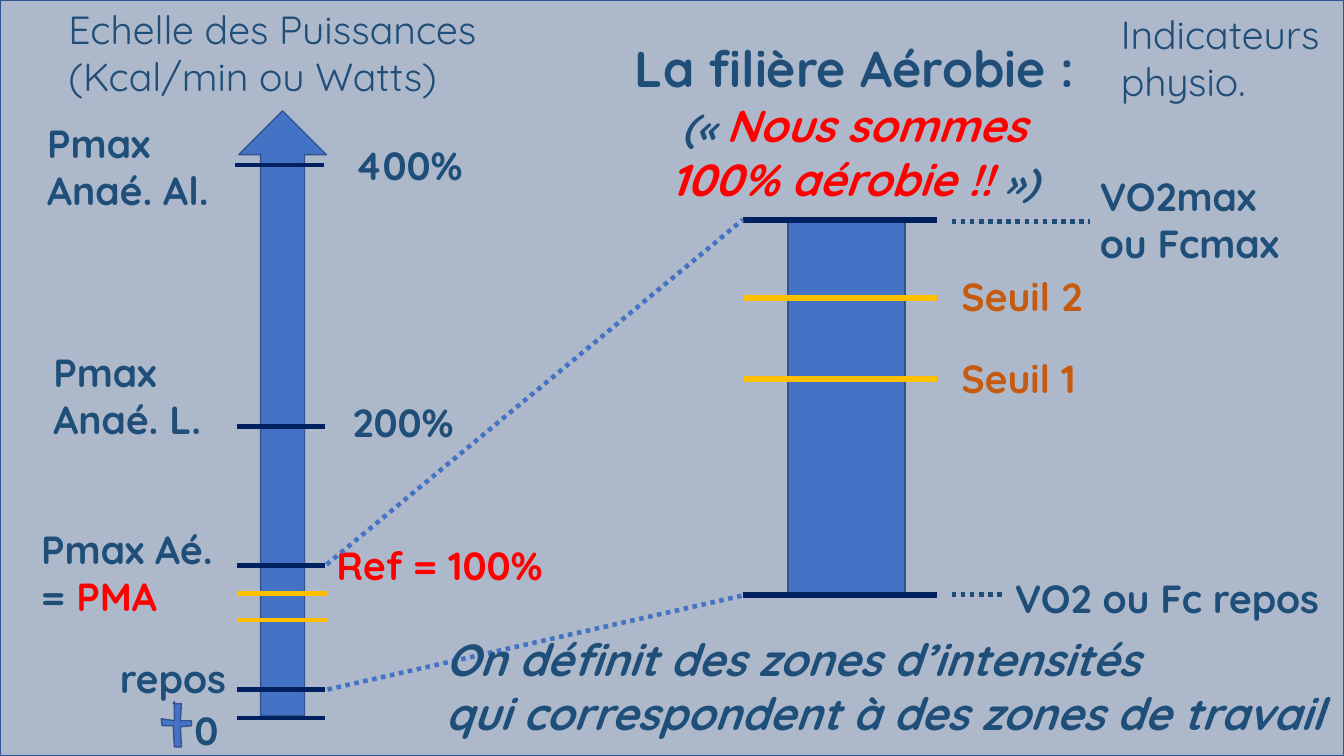
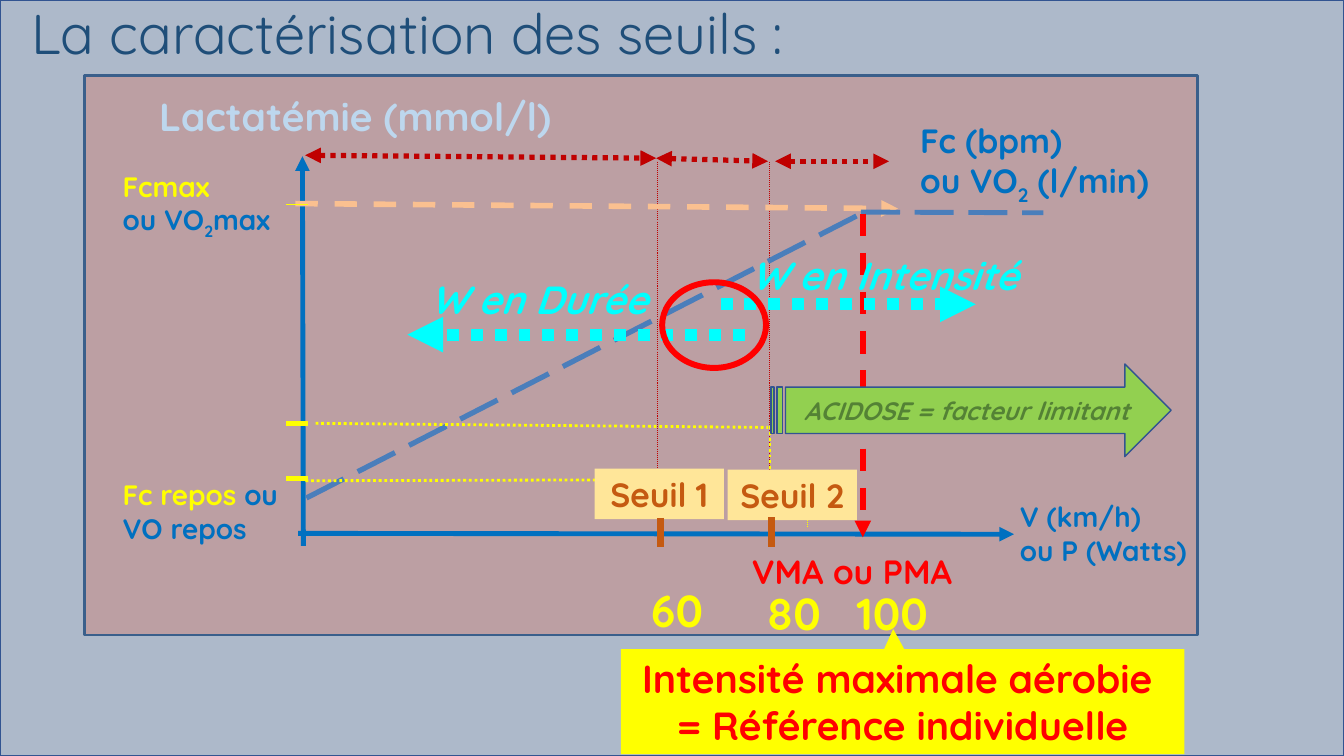
"""Build two slides on the aerobic pathway and its thresholds."""
import pptx
import pptx.dml.color
import pptx.enum.dml
import pptx.enum.shapes
import pptx.enum.text
import pptx.oxml.ns
import pptx.oxml.xmlchemy
import pptx.util

RGB = pptx.dml.color.RGBColor
Pt = pptx.util.Pt
GROUND = RGB(0xAD, 0xB9, 0xCA)
EDGE = RGB(0x32, 0x54, 0x91)
BLUE = RGB(0x44, 0x72, 0xC4)
INK = RGB(0x1F, 0x4E, 0x79)
NAVY = RGB(0x00, 0x20, 0x60)
AXIS = RGB(0x00, 0x70, 0xC0)
CURVE = RGB(0x4A, 0x7E, 0xBB)
PANEL_EDGE = RGB(0x3A, 0x5F, 0x8B)
PANEL = RGB(0xFF, 0x33, 0x00)
PALE = RGB(0xBD, 0xD7, 0xEE)
RED = RGB(0xFF, 0x00, 0x00)
DARK_RED = RGB(0xC0, 0x00, 0x00)
GOLD = RGB(0xFF, 0xC0, 0x00)
YELLOW = RGB(0xFF, 0xFF, 0x00)
PEACH = RGB(0xFA, 0xC0, 0x90)
CREAM = RGB(0xFF, 0xE6, 0x99)
RUST = RGB(0xC5, 0x5A, 0x11)
CYAN = RGB(0x00, 0xFF, 0xFF)
GREEN = RGB(0x92, 0xD0, 0x50)
DARK_GREEN = RGB(0x54, 0x82, 0x35)

SHAPE = pptx.enum.shapes.MSO_SHAPE
DASH = pptx.enum.dml.MSO_LINE
DOTS = DASH.ROUND_DOT
LEFT = pptx.enum.text.PP_ALIGN.LEFT
CENTER = pptx.enum.text.PP_ALIGN.CENTER
TOP = pptx.enum.text.MSO_ANCHOR.TOP
MIDDLE = pptx.enum.text.MSO_ANCHOR.MIDDLE


class Board:
    """Hold the shared style and the page being drawn."""

    font = "Quicksand"
    size = 28

    def __init__(self):
        """Open a wide deck with the shared ground."""
        self.deck = pptx.Presentation()
        self.deck.slide_width, self.deck.slide_height = Pt(960), Pt(540)
        ground = self.deck.slide_master.background.fill
        ground.solid()
        ground.fore_color.rgb = GROUND
        self.page = None

    def new_page(self, place, lines, **style):
        """Start a framed page with its title."""
        self.page = self.deck.slides.add_slide(self.deck.slide_layouts[5])
        title = self.page.shapes.title
        title.left, title.top, title.width, title.height = map(Pt, place)
        self.set_text(title, lines, **style)
        self.shape(SHAPE.RECTANGLE, (0, 0, 960, 540), edge=EDGE)

    def set_text(self, box, lines, size=None, color=INK, bold=True, italic=False,
                 align=LEFT, anchor=TOP, spacing=None):
        """Fill a box with lines, each a string or a list of (text, changes)."""
        frame = box.text_frame
        frame.word_wrap = True
        frame.auto_size = pptx.enum.text.MSO_AUTO_SIZE.NONE
        frame.vertical_anchor = anchor
        base = dict(size=size or self.size, color=color, bold=bold, italic=italic, baseline=0)
        for index, line in enumerate(lines):
            para = frame.add_paragraph() if index else frame.paragraphs[0]
            para.alignment = align
            if spacing:
                para.line_spacing = spacing
            for text, changes in [(line, {})] if isinstance(line, str) else line:
                look = {**base, **changes}
                span = para.add_run()
                span.text = text
                span.font.name = self.font
                span.font.size = Pt(look["size"])
                span.font.bold, span.font.italic = look["bold"], look["italic"]
                span.font.color.rgb = look["color"]
                if look["baseline"]:
                    span.font._element.set("baseline", str(look["baseline"] * 1000))

    def text(self, place, *lines, **style):
        """Add a text box."""
        self.set_text(self.page.shapes.add_textbox(*map(Pt, place)), lines, **style)

    def paint(self, shape, fill, edge, width, alpha=None):
        """Give a shape its fill and outline."""
        shape.shadow.inherit = False
        if fill is None:
            shape.fill.background()
        else:
            shape.fill.solid()
            shape.fill.fore_color.rgb = fill
        if alpha:
            color = shape._element.spPr.find(".//" + pptx.oxml.ns.qn("a:srgbClr"))
            self.child(color, "a:alpha", val=str(alpha * 1000))
        if edge is None:
            shape.line.fill.background()
        else:
            shape.line.color.rgb = edge
            shape.line.width = Pt(width)

    def child(self, parent, tag, **attributes):
        """Append an XML child with its attributes."""
        element = pptx.oxml.xmlchemy.OxmlElement(tag)
        for name, value in attributes.items():
            element.set(name, value)
        parent.append(element)

    def shape(self, kind, place, fill=None, edge=None, width=1, alpha=None, lines=(), **style):
        """Add a preset shape, with text if given."""
        shape = self.page.shapes.add_shape(kind, *map(Pt, place))
        self.paint(shape, fill, edge, width, alpha)
        if lines:
            self.set_text(shape, lines, align=CENTER, **style)

    def outline(self, points, fill, edge):
        """Add a closed polygon."""
        points = [(Pt(x), Pt(y)) for x, y in points]
        builder = self.page.shapes.build_freeform(*points[0], scale=1.0)
        builder.add_line_segments(points[1:], close=True)
        self.paint(builder.convert_to_shape(), fill, edge, 1)

    def line(self, start, end, color, width, dash=None, head=False, tail=False):
        """Add a straight line with optional dashes and arrowheads."""
        line = self.page.shapes.add_connector(
            pptx.enum.shapes.MSO_CONNECTOR.STRAIGHT, *map(Pt, (*start, *end)))
        line.line.color.rgb = color
        line.line.width = Pt(width)
        if dash:
            line.line.dash_style = dash
        stroke = line._element.spPr.find(pptx.oxml.ns.qn("a:ln"))
        for wanted, tag in ((head, "a:headEnd"), (tail, "a:tailEnd")):
            if wanted:
                self.child(stroke, tag, type="triangle")
        self.child(line._element.spPr, "a:effectLst")


def draw_pathway(board):
    """Draw the power scale beside the aerobic bar."""
    board.new_page((443.5, 23, 333.5, 128), [
        [("La filière Aérobie : ", {"size": 36})],
        [("(« ", {"italic": True}),
         ("Nous sommes 100% aérobie !! ", {"size": 32, "color": RED, "italic": True}),
         ("»)", {"italic": True})]], align=CENTER)

    board.shape(SHAPE.UP_ARROW, (170.6, 79.2, 62.6, 432), BLUE, EDGE)
    for left, y in ((169, 512.6), (169, 492.5), (168, 118), (169, 304.6), (169, 404)):
        board.line((left, y), (left + 63.4, y), NAVY, 3)
    for y in (442.8, 424):
        board.line((170, y), (233.6, y), GOLD, 3)
    board.outline([(124.6, 514.8), (124.6, 501.1), (123.8, 502.6), (129.6, 502.6),
                   (128.9, 514.8), (136.8, 514.8), (136.8, 518.4), (128.9, 519.1),
                   (129.6, 533.5), (124.6, 533.5), (123.8, 518.4), (115.9, 518.4),
                   (115.2, 513.4)], BLUE, EDGE)

    board.text((41.8, 0, 322, 75), "Echelle des Puissances (Kcal/min ou Watts)", bold=False)
    board.text((793.5, 3.6, 166.5, 75), "Indicateurs", "physio.", bold=False)
    for place, lines in (
            ((131.8, 501, 46.8, 41), ["0"]),
            ((78.5, 463.7, 106.5, 41), ["repos"]),
            ((26.6, 81.4, 172, 75), ["Pmax", "Anaé. Al."]),
            ((31, 245.5, 172, 75), ["Pmax", "Anaé. L."]),
            ((22.3, 371.5, 147, 75), ["Pmax Aé.", [("= ", {}), ("PMA", {"color": RED})]]),
            ((244.8, 280.8, 91.5, 41), ["200%"]),
            ((246.5, 97.2, 91.5, 41), ["400%"]),
            ((717.8, 406.8, 242.6, 41), ["VO2 ou Fc repos"]),
            ((778.5, 119.5, 163.5, 75), ["VO2max ou Fcmax"])):
        board.text(place, *lines)
    board.text((233.3, 383, 169, 41), "Ref = 100%", color=RED)

    board.shape(SHAPE.RECTANGLE, (563, 157, 83.5, 267), BLUE, EDGE)
    for y, color in ((157, NAVY), (424.8, NAVY), (270.7, GOLD), (213, GOLD)):
        board.line((530.6, y), (669.6, y), color, 4)
    for start, end, color in (
            ((233.3, 403.2), (530.6, 157), BLUE),
            ((234, 492.5), (530, 425.5), BLUE),
            ((679.7, 158.4), (778.3, 158.4), INK),
            ((679.7, 424.8), (717.8, 424.8), INK)):
        board.line(start, end, color, 3.25, DOTS)
    for label, top in (("Seuil 1", 249.8), ("Seuil 2", 190.8)):
        board.text((679.7, top, 104.4, 41), label, color=RUST)
    board.text((311, 447.8, 650, 85), "On définit des zones d’intensités",
               "qui correspondent à des zones de travail", size=32, italic=True)


def draw_thresholds(board):
    """Draw the threshold diagram."""
    board.new_page((15, -5, 932.4, 55.4), ["La caractérisation des seuils :"], size=40, bold=False)
    board.shape(SHAPE.RECTANGLE, (60.5, 54, 795, 399.6), PANEL, PANEL_EDGE, 2, alpha=19)

    low = {"baseline": -25}
    blue = {"color": AXIS}
    board.text((650.2, 82, 195, 67), "Fc (bpm)",
               [("ou VO", {}), ("2", low), (" (l/min)", {})], size=24, color=AXIS)
    board.text((721.4, 353.5, 150, 58), "V (km/h)", "ou P (Watts)", size=20, color=AXIS)

    board.line((216, 111.6), (216.7, 390), AXIS, 3.5, head=True)
    board.line((213, 381), (724.3, 381.6), AXIS, 3.5, tail=True)
    for x in (469.4, 550):
        board.line((x, 115.5), (x, 378), DARK_RED, 0.75, DOTS)
    board.line((211, 145.4), (641.5, 149), PEACH, 4, DASH.DASH, tail=True)
    for y, width in ((341.6, 3.75), (302.4, 3.75), (146.2, 0.75)):
        board.line((204.5, y), (220.3, y), YELLOW, width)
    board.line((576.7, 359.3), (576.7, 375.8), YELLOW, 0.75, DOTS)
    for start, end in (((218, 110.9), (468.7, 113)), ((468.7, 113), (548.6, 115.2)),
                       ((553.7, 115.2), (635, 115.2))):
        board.line(start, end, DARK_RED, 3.75, DOTS, head=True, tail=True)
    board.line((218.9, 355.7), (616.3, 152), CURVE, 3.75, DASH.LONG_DASH)
    board.line((615, 151.5), (745.2, 152), CURVE, 3.5, DASH.LONG_DASH)
    board.line((616.3, 152.6), (616.3, 383.8), RED, 4, DASH.DASH, tail=True)

    board.text((80.6, 117.4, 143.3, 58), "Fcmax",
               [("ou VO", blue), ("2", {**blue, **low}), ("max", blue)], size=20, color=YELLOW)
    board.text((80.6, 337.7, 132.5, 58), [("Fc repos ", {}), ("ou", blue)],
               [("VO repos", blue)], size=20, color=YELLOW)
    for start, end in (((225.4, 302.4), (548.6, 305.3)), ((550, 304.6), (550, 377.3)),
                       ((218.2, 343.4), (469.4, 342.7))):
        board.line(start, end, YELLOW, 2, DOTS)
    board.text((106.6, 62.6, 310, 41), "Lactatémie (mmol/l)", color=PALE)
    board.text((530, 390.2, 172, 36), "VMA ou PMA", size=24, color=RED)

    for start, end, y in ((532, 291, 239), (514.8, 697, 217.4)):
        board.line((start, y), (end, y), CYAN, 8.5, DOTS, tail=True)
    for label, left, top in (("W en Durée", 300.2, 189.4), ("W en Intensité", 529.2, 172)):
        board.text((left, top, 230, 52), label, color=CYAN, italic=True, spacing=1.11)
    board.line((640, 500.4), (638, 449.3), YELLOW, 6, DOTS, tail=True)
    board.shape(SHAPE.RECTANGLE, (443.5, 463.7, 402.5, 75), YELLOW, color=RED,
                lines=["Intensité maximale aérobie ", "= Référence individuelle"])
    board.shape(SHAPE.STRIPED_RIGHT_ARROW, (550.8, 260, 285.8, 66.2), GREEN, EDGE,
                lines=["ACIDOSE = facteur limitant"], size=18, color=DARK_GREEN,
                italic=True, anchor=MIDDLE)
    for label, left, top in (("60", 458, 412.6), ("80", 540.7, 414.7), ("100", 604.8, 414.7)):
        board.text((left, top, 76, 46), label, size=32, color=YELLOW)
    for label, left, top in (("Seuil 1", 424.8, 334.8), ("Seuil 2", 519.8, 335.5)):
        board.shape(SHAPE.RECTANGLE, (left, top, 92.2, 36), CREAM,
                    lines=[label], size=24, color=RUST)
    board.shape(SHAPE.OVAL, (473, 201.6, 74.2, 61.2), edge=RED, width=4.25)
    for x, top in ((551, 369.4), (471.6, 370)):
        board.line((x, top), (x, top + 21), RUST, 5.25)


def main():
    """Draw both pages and save the deck."""
    board = Board()
    draw_pathway(board)
    draw_thresholds(board)
    board.deck.save("out.pptx")


if __name__ == "__main__":
    main()
